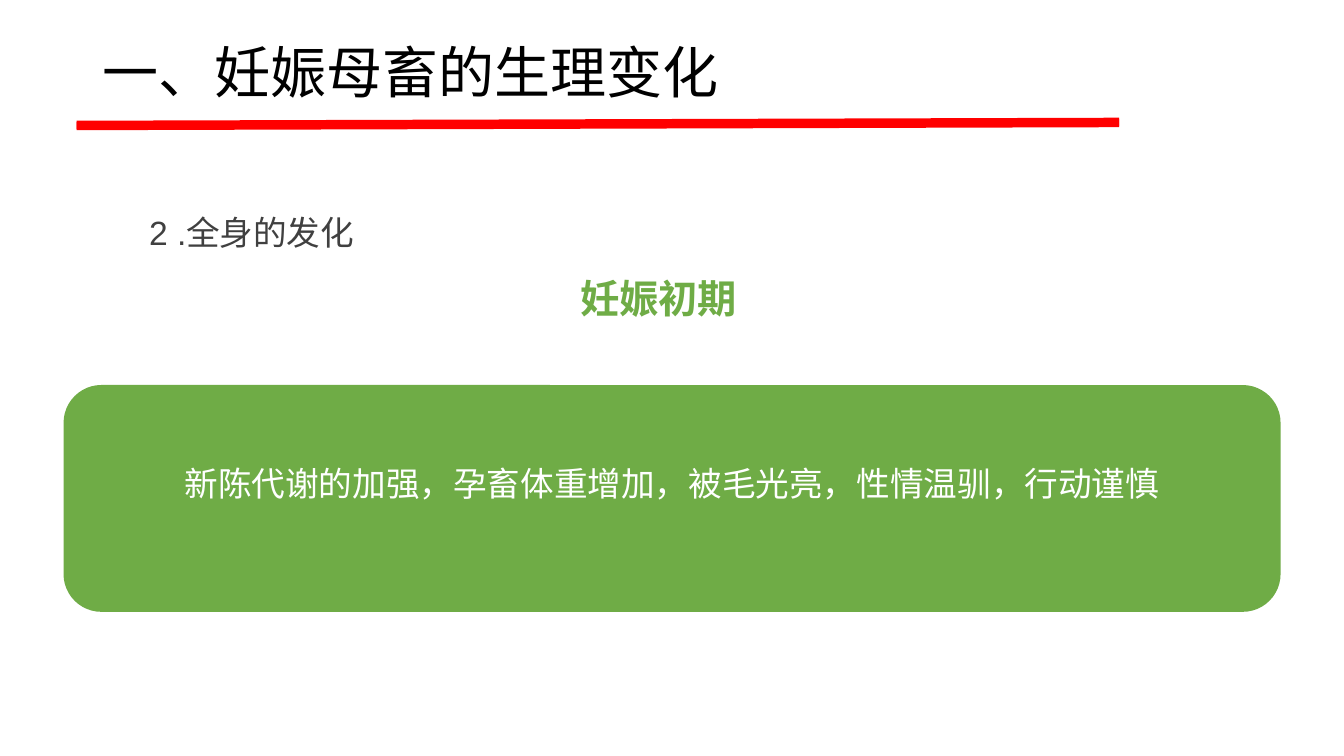
from lxml import etree
from pptx import Presentation, util as u
from pptx.dml.color import RGBColor
from pptx.enum import shapes, text
from pptx.oxml import ns

HUES = {"ink": "000000", "gray": "404040", "red": "FF0000",
        "green": "6FAC46", "white": "FFFFFF"}
SANS, LATIN = "Noto Sans CJK SC", "Arial"


class Board:
    """Draws on one slide; places and sizes are percent of its width and height."""

    def __init__(self, deck):
        self.deck = deck
        self.slide = deck.slides.add_slide(deck.slide_layouts[5])

    def box(self, x, y, w, h):
        wide, high = self.deck.slide_width, self.deck.slide_height
        return [u.Emu(round(part * full / 100))
                for part, full in ((x, wide), (y, high), (w, wide), (h, high))]

    def run(self, para, words, size, hue, face=SANS, bold=False, gap=0):
        """Add one run; gap is the letter spacing in points."""
        run = para.add_run()
        run.text = words
        font = run.font
        font.size, font.bold, font.name = u.Pt(size), bold, face
        font.color.rgb = RGBColor.from_string(HUES[hue])
        props = run._r.get_or_add_rPr()
        etree.SubElement(props, ns.qn("a:ea")).set("typeface", face)
        if gap:
            props.set("spc", str(round(gap * 100)))

    def title(self, place, words):
        head = self.slide.shapes.title
        head.left, head.top, head.width, head.height = self.box(*place)
        frame = head.text_frame
        frame.auto_size = text.MSO_AUTO_SIZE.NONE
        frame.vertical_anchor = text.MSO_ANCHOR.MIDDLE
        para = frame.paragraphs[0]
        para.alignment, para.line_spacing = text.PP_ALIGN.LEFT, 0.9
        self.run(para, words, 40, "ink")

    def label(self, place, runs, indent):
        """Add a one-line text box; indent is in inches."""
        frame = self.slide.shapes.add_textbox(*self.box(*place)).text_frame
        frame.word_wrap = True
        frame.auto_size = text.MSO_AUTO_SIZE.SHAPE_TO_FIT_TEXT
        frame.margin_left = frame.margin_right = frame.margin_bottom = 0
        frame.margin_top = u.Inches(0.01)
        para = frame.paragraphs[0]
        para._p.get_or_add_pPr().set("marL", str(u.Inches(indent)))
        for words, style in runs:
            self.run(para, words, **style)

    def rule(self, x, y, w, h):
        left, top, width, rise = self.box(x, y, w, h)
        line = self.slide.shapes.add_connector(
            shapes.MSO_CONNECTOR.STRAIGHT, left, top, left + width, top + rise)
        line.line.color.rgb = RGBColor.from_string(HUES["red"])
        line.line.width = u.Pt(6)
        etree.SubElement(line._element.spPr, ns.qn("a:effectLst"))

    def card(self, place, hue):
        card = self.slide.shapes.add_shape(
            shapes.MSO_SHAPE.ROUNDED_RECTANGLE, *self.box(*place))
        card.shadow.inherit = False
        card.fill.solid()
        card.fill.fore_color.rgb = RGBColor.from_string(HUES[hue])
        card.line.fill.background()


def main():
    deck = Presentation()
    deck.slide_width, deck.slide_height = u.Inches(13.33), u.Inches(7.5)
    board = Board(deck)
    for top in (16.53, 16.67):
        board.rule(5.7, top, 77.57, -0.4)
    board.title((6.9, 0.27, 86.27, 19.33), "一、妊娠母畜的生理变化")

    note = {"size": 24, "hue": "gray"}
    board.label((10.95, 27.87, 23.86, 5.6), [
        ("2 ", {**note, "face": LATIN, "gap": -0.1}),
        (".", {**note, "face": LATIN, "gap": 0.1}),
        ("全身的发化", {**note, "gap": -0.1})], 0.02)
    board.card((4.73, 50.93, 90.55, 30), "green")
    board.label((36.53, 36.13, 19.35, 6.4), [
        ("妊娠初期", {"size": 28, "hue": "green", "bold": True, "gap": -0.1})], 0.89)
    board.label((13.65, 61.07, 72.69, 5.73), [
        ("新陈代谢的加强，孕畜体重增加，被毛光亮，性情温驯，行动谨慎",
         {"size": 24, "hue": "white"})], 0.01)
    deck.save("out.pptx")


if __name__ == "__main__":
    main()
